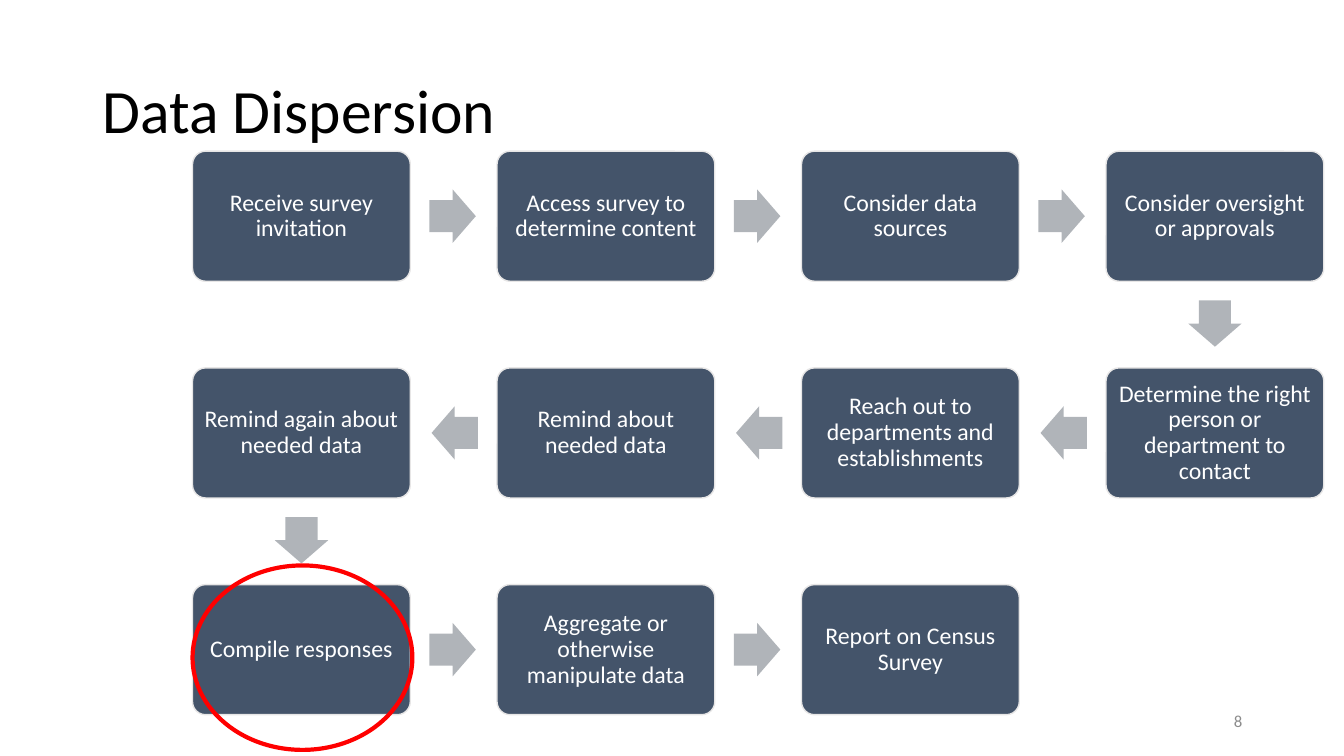
from pptx import Presentation
from pptx.dml.color import RGBColor
from pptx.enum.shapes import MSO_SHAPE
from pptx.enum.text import MSO_ANCHOR, PP_ALIGN
from pptx.util import Inches, Pt

STEPS = [
    "Receive survey invitation",
    "Access survey to determine content",
    "Consider data sources",
    "Consider oversight or approvals",
    "Determine the right person or department to contact",
    "Reach out to departments and establishments",
    "Remind about needed data",
    "Remind again about needed data",
    "Compile responses",
    "Aggregate or otherwise manipulate data",
    "Report on Census Survey",
]
COLS = 4
LEFT, TOP = 1.91, 1.5
STEP_X, STEP_Y = 3.02, 2.15
CARD_W, CARD_H = 2.16, 1.29
HEAD_W, HEAD_H = 0.46, 0.53
BACK = 0.01

TITLE = {"size": 44, "color": "000000", "align": PP_ALIGN.LEFT, "space": 0.9}
CARD = {"size": 17, "color": "FFFFFF", "align": PP_ALIGN.CENTER, "space": 0.9}
PAGE = {"size": 12, "color": "8C8C8C", "align": PP_ALIGN.RIGHT, "space": 1.0}
TIGHT = dict.fromkeys(
    ("margin_left", "margin_top", "margin_right", "margin_bottom"), Inches(0.07))


def paint(color, code):
    color.rgb = RGBColor.from_string(code)


def write(shape, text, style, margins={}):
    frame = shape.text_frame
    form = {"word_wrap": True, "vertical_anchor": MSO_ANCHOR.MIDDLE, **margins}
    for name, value in form.items():
        setattr(frame, name, value)
    para = frame.paragraphs[0]
    para.alignment = style["align"]
    para.line_spacing = style["space"]
    run = para.add_run()
    run.text = text
    for name, value in {"name": "Calibri", "size": Pt(style["size"])}.items():
        setattr(run.font, name, value)
    paint(run.font.color, style["color"])


def draw(kind, box, fill=None, line=None, width=1, adjust=()):
    shape = slide.shapes.add_shape(kind, *map(Inches, box))
    shape.shadow.inherit = False
    for i, value in enumerate(adjust):
        shape.adjustments[i] = value
    if fill:
        shape.fill.solid()
        paint(shape.fill.fore_color, fill)
    else:
        shape.fill.background()
    if line:
        paint(shape.line.color, line)
        shape.line.width = Pt(width)
    else:
        shape.line.fill.background()
    return shape


def label(box, text, style):
    write(slide.shapes.add_textbox(*map(Inches, box)), text, style)


def place(i):
    row, col = divmod(i, COLS)
    if row % 2:
        col = COLS - 1 - col
    return LEFT + col * STEP_X, TOP + row * STEP_Y


def point(start, end):
    (x1, y1), (x2, y2) = start, end
    turn = 90 if y2 > y1 else 0 if x2 > x1 else 180
    dx, dy = {0: (1, 0), 90: (0, 1), 180: (-1, 0)}[turn]
    x = (x1 + x2 + CARD_W - HEAD_W) / 2 - dx * BACK
    y = (y1 + y2 + CARD_H - HEAD_H) / 2 - dy * BACK
    arrow = draw(MSO_SHAPE.RIGHT_ARROW, (x, y, HEAD_W, HEAD_H), "B0B4B9",
                 adjust=(0.6, 0.5))
    arrow.rotation = turn


deck = Presentation()
deck.slide_width, deck.slide_height = Inches(13.33), Inches(7.5)
slide = deck.slides.add_slide(deck.slide_layouts[6])

label((0.92, 0.4, 11.5, 1.45), "Data Dispersion", TITLE)
for i, step in enumerate(STEPS):
    card = draw(MSO_SHAPE.ROUNDED_RECTANGLE, (*place(i), CARD_W, CARD_H),
                "44546A", "E7E6E6", adjust=(0.1,))
    write(card, step, CARD, TIGHT)
    if i + 1 < len(STEPS):
        point(place(i), place(i + 1))
label((9.42, 6.95, 3, 0.4), "8", PAGE)
draw(MSO_SHAPE.OVAL, (1.91, 5.61, 2.18, 1.83), line="FF0000", width=3)

deck.save("out.pptx")
